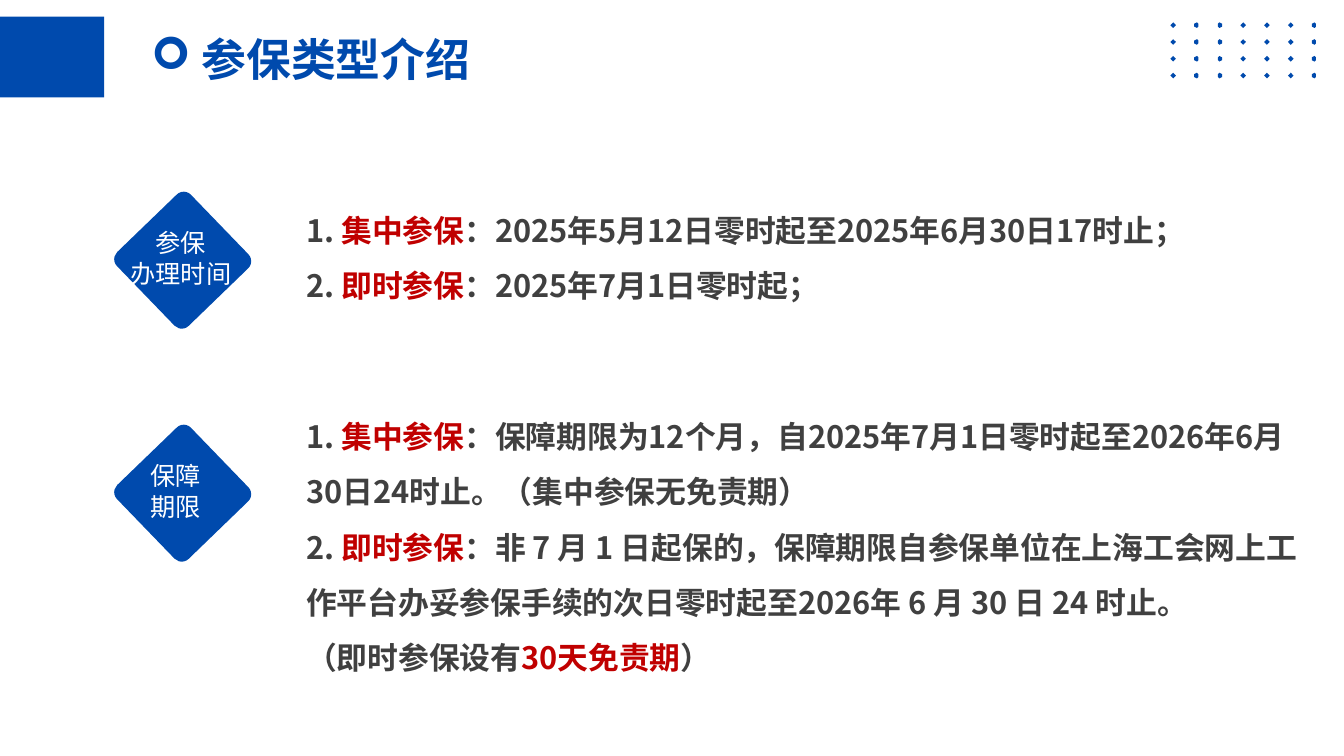
from math import cos, pi, sin

from lxml import etree
from pptx import Presentation
from pptx.dml.color import RGBColor
from pptx.enum.shapes import MSO_SHAPE
from pptx.enum.text import PP_ALIGN
from pptx.oxml.ns import qn
from pptx.util import Pt

RECT, DIAMOND = MSO_SHAPE.RECTANGLE, MSO_SHAPE.ROUNDED_RECTANGLE
LEFT, CENTER = PP_ALIGN.LEFT, PP_ALIGN.CENTER
BLUE = RGBColor(0x00, 0x4A, 0xAD)
RED = RGBColor(0xC0, 0x00, 0x00)
GRAY = RGBColor(0x40, 0x40, 0x40)
WHITE = RGBColor(0xFF, 0xFF, 0xFF)
FONT = "Noto Sans CJK SC"

TIMES = [
    [("1. ", GRAY), ("集中参保", RED),
     ("：2025年5月12日零时起至2025年6月30日17时止；", GRAY)],
    [("2. ", GRAY), ("即时参保", RED), ("：2025年7月1日零时起；", GRAY)],
]
TERMS = [
    [("1. ", GRAY), ("集中参保", RED),
     ("：保障期限为12个月，自2025年7月1日零时起至2026年6月30日24时止。"
      "（集中参保无免责期）", GRAY)],
    [("2. ", GRAY), ("即时参保", RED),
     ("：非 7 月 1 日起保的，保障期限自参保单位在上海工会网上工作平台办妥参保手续的"
      "次日零时起至2026年 6 月 30 日 24 时止。", GRAY)],
    [("（即时参保设有", GRAY), ("30天免责期", RED), ("）", GRAY)],
]


def paint(sp):
    """Make a shape plain blue."""
    sp.shadow.inherit = False
    sp.fill.solid()
    sp.fill.fore_color.rgb = BLUE
    sp.line.fill.background()
    return sp


def add_block(s, kind, x, y, w, h):
    """Add a plain blue preset shape."""
    return paint(s.shapes.add_shape(kind, Pt(x), Pt(y), Pt(w), Pt(h)))


def add_text(s, x, y, w, h, paragraphs, size, bold=True, wrap=True, align=LEFT, spacing=None):
    """Add a text box whose paragraphs are lists of (text, colour) runs."""
    tf = s.shapes.add_textbox(Pt(x), Pt(y), Pt(w), Pt(h)).text_frame
    tf.word_wrap = wrap
    for i, runs in enumerate(paragraphs):
        p = tf.add_paragraph() if i else tf.paragraphs[0]
        p.alignment = align
        if spacing:
            p.line_spacing = spacing
        for text, color in runs:
            r = p.add_run()
            r.text = text
            r.font.size = Pt(size)
            r.font.bold = bold
            r.font.name = FONT
            r.font.color.rgb = color
            etree.SubElement(r.font._element, qn("a:ea")).set("typeface", FONT)
    return tf


def add_header(s, x, y, w, h):
    """Add the corner block and the bulleted title."""
    add_block(s, RECT, x, y, w, h)
    tf = add_text(s, x + 100.8, y + 7.4, 349.2, 46, [[("参保类型介绍", BLUE)]], 32)
    pPr = tf.paragraphs[0]._p.get_or_add_pPr()
    pPr.set("marL", str(Pt(36)))
    pPr.set("indent", str(Pt(-36)))
    etree.SubElement(pPr, qn("a:buFont")).set("typeface", "Wingdings")
    etree.SubElement(pPr, qn("a:buChar")).set("char", "➢")


def add_dots(s, x, y, w, h, cols=7, rows=4, radius=1.8, sides=8):
    """Fill the box with an even grid of dots drawn as one outline."""
    dx, dy = (w - 2 * radius) / (cols - 1), (h - 2 * radius) / (rows - 1)
    builder = s.shapes.build_freeform(scale=Pt(1))
    for i in range(cols * rows):
        cx, cy = x + radius + i % cols * dx, y + radius + i // cols * dy
        ring = [(cx + radius * cos(2 * pi * k / sides), cy + radius * sin(2 * pi * k / sides))
                for k in range(sides)]
        builder.move_to(*ring[0]) if i else None
        if not i:
            builder = s.shapes.build_freeform(*ring[0], scale=Pt(1))
        builder.add_line_segments(ring[1:], close=True)
    paint(builder.convert_to_shape())


def add_badge(s, x, y, size, lines, text_x, text_w, align, inset):
    """Add a rounded diamond with its two-line label."""
    sp = add_block(s, DIAMOND, x, y, size, size)
    sp.adjustments[0] = 0.097
    sp.rotation = 46
    tf = add_text(s, x + text_x, y + 10, text_w, 55.4, [[(line, WHITE)] for line in lines],
                  18, bold=False, wrap=False, align=align)
    tf.margin_left = tf.margin_right = Pt(inset)


def main():
    """Build the slide and save it."""
    prs = Presentation()
    prs.slide_width, prs.slide_height = Pt(960), Pt(540)
    s = prs.slides.add_slide(prs.slide_layouts[6])
    add_header(s, 0, 12, 74.4, 57.6)
    add_dots(s, 836, 16, 104.4, 39.6)
    add_badge(s, 93.8, 149.2, 73.4, ["参保", "办理时间"], -3.8, 78.5, CENTER, 0)
    add_badge(s, 93.8, 315.6, 73.4, ["保障", "期限"], 6.5, 65.5, LEFT, 7.2)
    add_text(s, 211.7, 134.6, 682.6, 77, TIMES, 22, spacing=1.5)
    add_text(s, 211.7, 281.5, 730, 145.4, TERMS, 22, spacing=1.5)
    prs.save("out.pptx")


if __name__ == "__main__":
    main()
